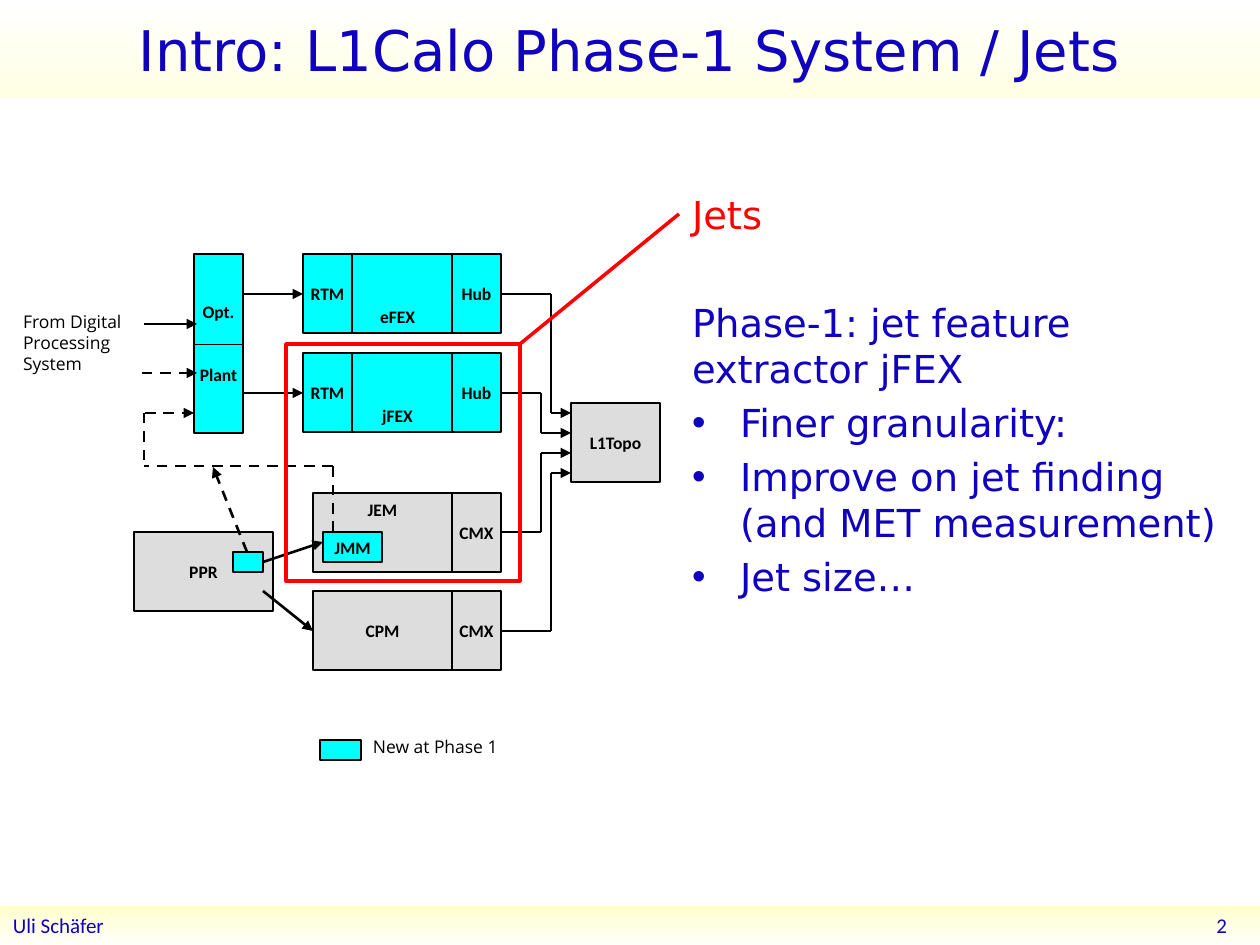
import pptx
import pptx.dml.color
import pptx.enum.dml
import pptx.enum.shapes
import pptx.enum.text
import pptx.oxml.ns
import pptx.util
from lxml import etree

EMU_PER_PX = 914400 / 126
COLORS = {
    "blue": "0F01BF", "red": "FF0000", "black": "000000",
    "new": "00FFFF", "existing": "DDDDDD",
    "white": "FFFFFF", "pale": "FFFFE3", "cream": "FFFFCC", "ivory": "FFFFFA",
}
ANCHOR = pptx.enum.text.MSO_ANCHOR
ALIGN = pptx.enum.text.PP_ALIGN
RECT = pptx.enum.shapes.MSO_SHAPE.RECTANGLE
STRAIGHT = pptx.enum.shapes.MSO_CONNECTOR.STRAIGHT
qn = pptx.oxml.ns.qn


def px(n):
    return pptx.util.Emu(round(n * EMU_PER_PX))


def rgb(name):
    return pptx.dml.color.RGBColor.from_string(COLORS[name])


def place(s, x, y, w, h):
    s.left, s.top, s.width, s.height = px(x), px(y), px(w), px(h)


def set_frame(tf, anchor=ANCHOR.TOP, wrap=True, inset=13):
    tf.auto_size = pptx.enum.text.MSO_AUTO_SIZE.NONE
    tf.word_wrap = wrap
    tf.vertical_anchor = anchor
    tf.margin_left = tf.margin_right = px(inset)
    tf.margin_top = tf.margin_bottom = px(6)


def add_text(tf, text, size=10, font="Calibri", color="black", bold=False,
             align=ALIGN.LEFT, before=0):
    """Fill the first paragraph of an empty frame, or append a new one."""
    p = tf.add_paragraph() if tf.text else tf.paragraphs[0]
    p.alignment = align
    p.space_before = pptx.util.Pt(before)
    r = p.add_run()
    r.text = text
    r.font.size = pptx.util.Pt(size)
    r.font.name = font
    r.font.bold = bold
    r.font.color.rgb = rgb(color)
    return p


def set_bullet(p, char=None, indent=0):
    pPr = p._p.get_or_add_pPr()
    pPr.set("marL", str(px(indent)))
    pPr.set("indent", str(px(-indent)))
    if char:
        etree.SubElement(pPr, qn("a:buChar")).set("char", char)
    else:
        etree.SubElement(pPr, qn("a:buNone"))


def set_gradient(s, top, bottom):
    s.fill.gradient()
    s.fill.gradient_angle = 270
    for stop, name, position in zip(s.fill.gradient_stops, (top, bottom), (0, 1)):
        stop.color.rgb = rgb(name)
        stop.position = position


def add_rect(sp, x, y, w, h, fill=None, line="black", width=0.75):
    s = sp.add_shape(RECT, px(x), px(y), px(w), px(h))
    s.shadow.inherit = False
    if fill:
        s.fill.solid()
        s.fill.fore_color.rgb = rgb(fill)
    else:
        s.fill.background()
    if line:
        s.line.color.rgb = rgb(line)
        s.line.width = pptx.util.Pt(width)
    else:
        s.line.fill.background()
    return s


def add_module(sp, labels, x, y, w, h, fill, anchor=ANCHOR.MIDDLE):
    """Diagram block; several labels are stacked with a wide gap."""
    tf = add_rect(sp, x, y, w, h, fill).text_frame
    set_frame(tf, anchor, wrap=False)
    for i, label in enumerate(labels):
        add_text(tf, label, bold=True, align=ALIGN.CENTER, before=24 if i else 0)


def add_label(sp, text, x, y, w, h, anchor=ANCHOR.TOP, wrap=True, inset=13, **fmt):
    tf = sp.add_textbox(px(x), px(y), px(w), px(h)).text_frame
    set_frame(tf, anchor, wrap, inset)
    add_text(tf, text, **fmt)


def add_line(sp, x1, y1, x2, y2, arrow=False, dash=False, color="black", width=1.5):
    c = sp.add_connector(STRAIGHT, px(x1), px(y1), px(x2), px(y2))
    c.line.color.rgb = rgb(color)
    c.line.width = pptx.util.Pt(width)
    if dash:
        c.line.dash_style = pptx.enum.dml.MSO_LINE.DASH
    spPr = c.element.spPr
    if arrow:
        etree.SubElement(spPr.find(qn("a:ln")), qn("a:tailEnd")).set("type", "triangle")
    etree.SubElement(spPr, qn("a:effectLst"))


def add_title(slide):
    s = slide.shapes.title
    place(s, 0, 0, 1260, 98)
    set_gradient(s, "white", "pale")
    set_frame(s.text_frame, ANCHOR.MIDDLE)
    add_text(s.text_frame, "Intro: L1Calo Phase-1 System / Jets", size=32,
             font="DejaVu Sans", color="blue", align=ALIGN.CENTER)


def add_body(slide):
    s = slide.placeholders[1]
    place(s, 679, 185, 551, 711)
    tf = s.text_frame
    set_frame(tf)
    for text, color, before, bullet in (
        ("Jets", "red", 4.4, None),
        ("Phase-1: jet feature extractor jFEX", "blue", 35.4, None),
        ("Finer granularity:", "blue", 4.4, "•"),
        ("Improve on jet finding (and MET measurement)", "blue", 4.4, "•"),
        ("Jet size…", "blue", 4.4, "•"),
    ):
        p = add_text(tf, text, size=22, font="DejaVu Sans", color=color, before=before)
        set_bullet(p, bullet, 48 if bullet else 0)


def add_footer(sp):
    s = add_rect(sp, 0, 906, 1260, 39, line=None)
    set_gradient(s, "cream", "ivory")
    set_frame(s.text_frame, ANCHOR.MIDDLE)
    add_text(s.text_frame, "Uli Schäfer", size=12, color="blue")
    add_label(sp, "2", 974, 905, 266, 40, ANCHOR.MIDDLE,
              size=12, color="blue", align=ALIGN.RIGHT)


def add_modules(sp):
    add_module(sp, ["PPR"], 134, 532, 139, 79, "existing")
    add_module(sp, ["Opt.", "Plant"], 194, 254, 49, 179, "new")
    add_line(sp, 194, 344, 243, 344, width=0.5)
    for name, y in (("eFEX", 254), ("jFEX", 353)):
        add_module(sp, [name], 343, y, 109, 79, "new", ANCHOR.BOTTOM)
        add_module(sp, ["RTM"], 303, y, 49, 79, "new")
        add_module(sp, ["Hub"], 452, y, 49, 79, "new")
    for name, y, anchor in (("JEM", 493, ANCHOR.TOP), ("CPM", 591, ANCHOR.MIDDLE)):
        add_module(sp, [name], 313, y, 139, 79, "existing", anchor)
        add_module(sp, ["CMX"], 452, y, 49, 79, "existing")
    add_module(sp, ["L1Topo"], 571, 403, 89, 79, "existing")
    add_module(sp, ["JMM"], 323, 532, 59, 30, "new")
    add_rect(sp, 233, 552, 30, 20, "new")


def add_wiring(sp):
    for arrow in ((144, 324, 197, 324), (243, 294, 303, 294), (243, 393, 303, 393),
                  (263, 562, 323, 542), (263, 591, 313, 631)):
        add_line(sp, *arrow, arrow=True)
    for arrow in ((142, 373, 197, 373), (145, 413, 194, 413), (247, 552, 213, 467)):
        add_line(sp, *arrow, arrow=True, dash=True)
    for segment in ((333, 532, 333, 466), (333, 466, 144, 466), (144, 413, 144, 466)):
        add_line(sp, *segment, dash=True)
    for y, bus_x, topo_y in ((294, 551, 413), (393, 541, 433),
                             (532, 541, 453), (631, 551, 473)):
        add_line(sp, 501, y, bus_x, y)
        add_line(sp, bus_x, y, bus_x, topo_y)
        add_line(sp, bus_x, topo_y, 571, topo_y, arrow=True)


def add_annotations(sp):
    add_label(sp, "From Digital Processing System", 23, 305, 118, 76,
              inset=0, font="Open Sans")
    add_rect(sp, 320, 740, 41, 20, "new")
    add_label(sp, "New at Phase 1", 360, 730, 155, 34, wrap=False, font="Open Sans")
    add_rect(sp, 286, 344, 234, 237, line="red", width=2)
    add_line(sp, 520, 344, 679, 214, color="red", width=2)


def main():
    prs = pptx.Presentation()
    prs.slide_width, prs.slide_height = px(1260), px(945)
    slide = prs.slides.add_slide(prs.slide_layouts[1])
    add_title(slide)
    add_body(slide)
    add_footer(slide.shapes)
    add_modules(slide.shapes)
    add_wiring(slide.shapes)
    add_annotations(slide.shapes)
    prs.save("out.pptx")


if __name__ == "__main__":
    main()
